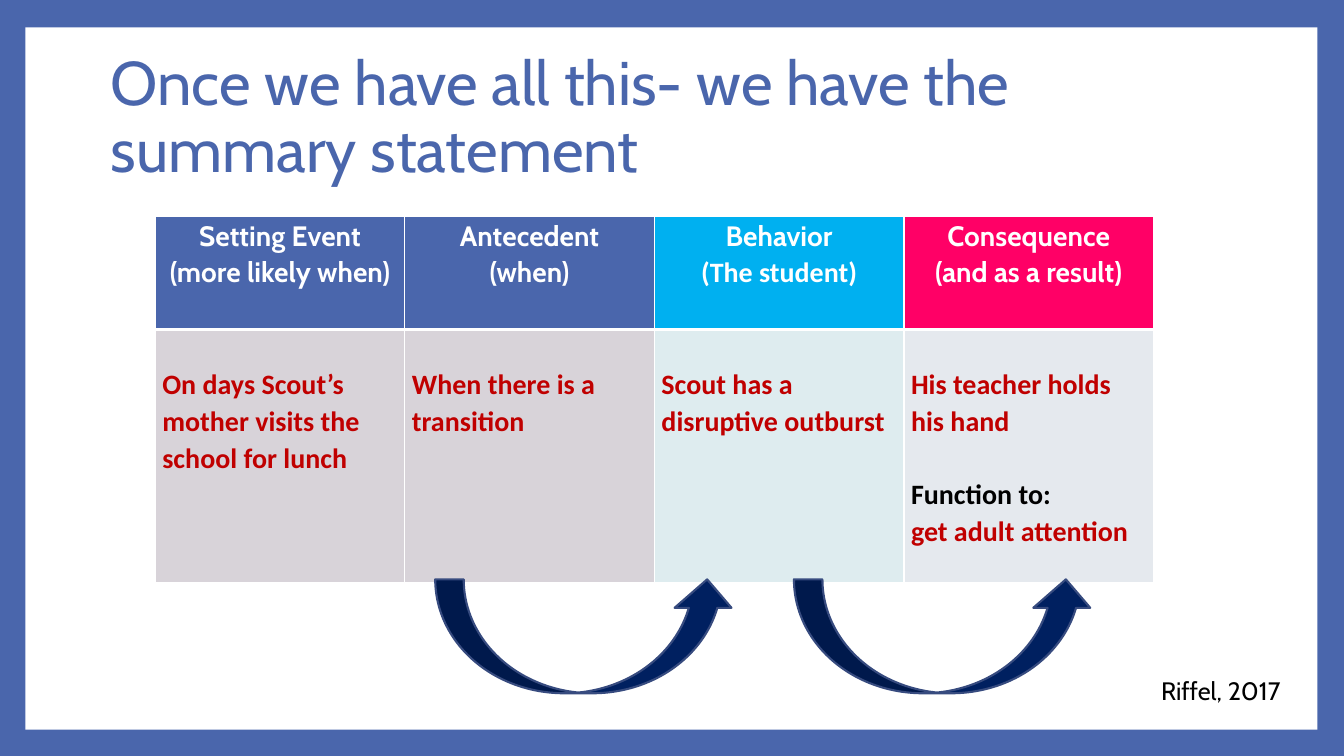
from lxml import etree
from pptx import Presentation
from pptx.dml.color import RGBColor
from pptx.enum.shapes import MSO_SHAPE
from pptx.enum.text import MSO_ANCHOR, PP_ALIGN
from pptx.oxml.ns import qn
from pptx.util import Cm, Pt

RECT = MSO_SHAPE.RECTANGLE
CURVED_ARROW = MSO_SHAPE.CURVED_UP_ARROW
TOP, MIDDLE = MSO_ANCHOR.TOP, MSO_ANCHOR.MIDDLE
LEFT, CENTER = PP_ALIGN.LEFT, PP_ALIGN.CENTER

BLUE, WHITE, BLACK, RED = "4A66AC", "FFFFFF", "000000", "C00000"
CABIN, CALIBRI = "Cabin", "Calibri"

HEADERS = [
    (BLUE, [("Setting Event", CABIN), ("(more likely when)", CABIN)]),
    (BLUE, [("Antecedent", CABIN), ("(when)", CABIN)]),
    ("00B0F0", [("Behavior", CABIN), ("(The student)", CALIBRI)]),
    ("FF0066", [("Consequence", CABIN), ("(and as a result)", CABIN)]),
]
STATEMENTS = [
    ("D8D3D9", [("On days Scout’s mother visits the school for lunch", RED, 0)]),
    ("D8D3D9", [("When there is a transition", RED, 0)]),
    ("DEECEF", [("Scout has a disruptive outburst", RED, 0)]),
    ("E5E9EE", [("His teacher holds his hand", RED, 0),
                ("Function to:", BLACK, 26),
                ("get adult attention", RED, 0)]),
]


def rgb(value):
    return RGBColor.from_string(value)


class SlideBuilder:
    """Holds the text style and the current slide."""

    def __init__(self, prs, size=20):
        self.size = size
        self.slide = prs.slides.add_slide(prs.slide_layouts[6])

    def background(self, color):
        fill = self.slide.background.fill
        fill.solid()
        fill.fore_color.rgb = rgb(color)

    def shape(self, kind, x, y, w, h, color, line=None):
        sp = self.slide.shapes.add_shape(kind, Cm(x), Cm(y), Cm(w), Cm(h))
        sp.shadow.inherit = False
        sp.fill.solid()
        sp.fill.fore_color.rgb = rgb(color)
        if line:
            sp.line.color.rgb = rgb(line)
            sp.line.width = Pt(1.5)
        else:
            sp.line.fill.background()

    def paragraph(self, p, text, font, color, size=None, bold=False, align=LEFT,
                  spacing=1.0, before=0):
        p.text = text
        p.alignment = align
        p.line_spacing = spacing
        p.space_before = Pt(before)
        for r in p.runs:
            r.font.name = font
            r.font.size = Pt(size or self.size)
            r.font.bold = bold
            r.font.color.rgb = rgb(color)

    def text(self, x, y, w, h, text, color, size, spacing=1.0, anchor=TOP):
        tf = self.slide.shapes.add_textbox(Cm(x), Cm(y), Cm(w), Cm(h)).text_frame
        tf.word_wrap = True
        tf.vertical_anchor = anchor
        self.paragraph(tf.paragraphs[0], text, CABIN, color, size, spacing=spacing)

    def table(self, x, y, col_width, row_heights, cols):
        shape = self.slide.shapes.add_table(
            len(row_heights), cols, Cm(x), Cm(y),
            Cm(col_width * cols), Cm(sum(row_heights)))
        for col in shape.table.columns:
            col.width = Cm(col_width)
        for row, height in zip(shape.table.rows, row_heights):
            row.height = Cm(height)
        return shape.table

    def cell(self, cell, color, lines, top, borders, align=LEFT):
        cell.margin_left = cell.margin_right = Cm(0.18)
        cell.margin_top, cell.margin_bottom = Cm(top), 0
        tc_pr = cell._tc.get_or_add_tcPr()
        for side, width in zip("LRTB", borders):
            ln = etree.SubElement(tc_pr, qn(f"a:ln{side}"), w=str(Pt(width)))
            fill = etree.SubElement(ln, qn("a:solidFill"))
            etree.SubElement(fill, qn("a:srgbClr"), val=WHITE)
        cell.fill.solid()
        cell.fill.fore_color.rgb = rgb(color)
        tf = cell.text_frame
        for i, (text, font, text_color, before) in enumerate(lines):
            p = tf.add_paragraph() if i else tf.paragraphs[0]
            self.paragraph(p, text, font, text_color, bold=True, align=align,
                           spacing=1.07, before=before)


def main():
    prs = Presentation()
    prs.slide_width, prs.slide_height = Cm(33.87), Cm(19.05)
    s = SlideBuilder(prs)
    s.background(BLUE)
    s.shape(RECT, 0.64, 0.69, 32.56, 17.7, WHITE)
    s.text(2.54, 1.12, 27.43, 3.76,
           "Once we have all this- we have the summary statement",
           BLUE, 44, spacing=0.9, anchor=MIDDLE)

    table = s.table(3.91, 5.46, 6.29, [2.84, 6.38], len(HEADERS))
    for i, (color, lines) in enumerate(HEADERS):
        s.cell(table.cell(0, i), color, [(t, f, WHITE, 0) for t, f in lines],
               0, (1, 1, 1, 3), CENTER)
    for i, (color, lines) in enumerate(STATEMENTS):
        s.cell(table.cell(1, i), color, [(t, CALIBRI, c, b) for t, c, b in lines],
               0.92, (1, 1, 3, 1))

    for i in range(2):
        s.shape(CURVED_ARROW, 10.97 + 9.04 * i, 14.6, 7.57, 2.87, "002060", "374B7F")
    s.text(29.01, 16.89, 4.55, 1.02, "Riffel, 2017", BLACK, 18)
    prs.save("out.pptx")


if __name__ == "__main__":
    main()
